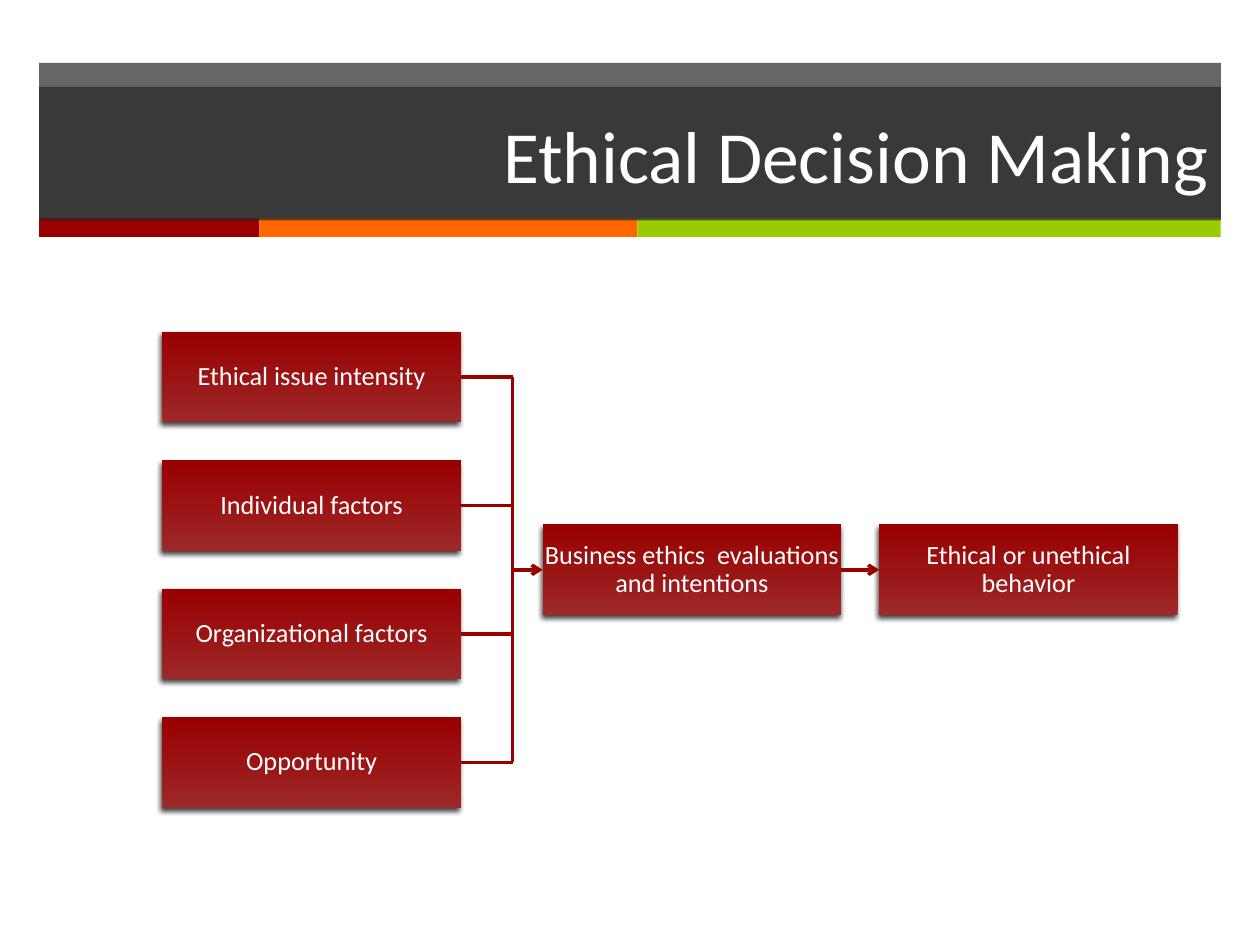
"""Build the ethical decision making slide: four factors leading to behavior."""
from lxml import etree
from pptx import Presentation
from pptx.dml.color import RGBColor
from pptx.enum import shapes as es, text as et
from pptx.oxml.ns import qn
from pptx.util import Pt

RED = RGBColor(0x99, 0x00, 0x00)
ROSE = RGBColor(0x9D, 0x28, 0x28)
DEEP = RGBColor(0x7B, 0x00, 0x00)
DARK = RGBColor(0x26, 0x26, 0x26)
ORANGE = RGBColor(0xFF, 0x66, 0x00)
GREEN = RGBColor(0x99, 0xCC, 0x00)
WHITE = RGBColor(0xFF, 0xFF, 0xFF)
FONT = "Calibri"

TITLE = "Ethical Decision Making"
FACTORS = ["Ethical issue intensity", "Individual factors",
           "Organizational factors", "Opportunity"]
INTENT = "Business ethics  evaluations and intentions"
RESULT = "Ethical or unethical behavior"
STRIPS = [(126, RED), (216, ORANGE), (333.3, GREEN)]

EDGE, SPAN = 22.3, 675.3
LEFT, TOP, STEP = 92.8, 189.6, 73.4
WIDE, HIGH = 170.6, 51.8
MID, LAST, BUS = 310.1, 502.4, 293
ROW = TOP + STEP * (len(FACTORS) - 1) / 2


def write(frame, words, size, align):
    """Put one formatted run into a text frame."""
    frame.word_wrap = True
    frame.vertical_anchor = et.MSO_ANCHOR.MIDDLE
    para = frame.paragraphs[0]
    para.alignment = align
    run = para.add_run()
    run.text = words
    run.font.size, run.font.name = Pt(size), FONT
    run.font.color.rgb = WHITE
    return para


def paint(shape, color, alpha=None):
    """Fill a shape, with an optional opacity in percent."""
    shape.fill.solid()
    shape.fill.fore_color.rgb = color
    if alpha:
        tint = shape._element.spPr.find(qn("a:solidFill"))[0]
        etree.SubElement(tint, qn("a:alpha"), val=str(alpha * 1000))


def rect(tree, x, y, w, h):
    """Add a plain rectangle without outline or shadow."""
    shape = tree.add_shape(es.MSO_SHAPE.RECTANGLE, Pt(x), Pt(y), Pt(w), Pt(h))
    shape.line.fill.background()
    shape.shadow.inherit = False
    return shape


def box(tree, x, y, words):
    """Add a shaded, shadowed box with centred text."""
    shape = rect(tree, x, y, WIDE, HIGH)
    shape.fill.gradient()
    shape.fill.gradient_angle = 90
    for stop, color in zip(shape.fill.gradient_stops, (ROSE, RED)):
        stop.color.rgb = color
    glow = etree.SubElement(
        shape._element.spPr.find(qn("a:effectLst")), qn("a:outerShdw"),
        blurRad=str(Pt(3)), dist=str(Pt(2)), dir="6600000", rotWithShape="0")
    tint = etree.SubElement(glow, qn("a:srgbClr"), val="000000")
    etree.SubElement(tint, qn("a:alpha"), val="75000")
    frame = shape.text_frame
    frame.margin_left = frame.margin_right = Pt(0.9)
    frame.margin_top = frame.margin_bottom = Pt(0.9)
    write(frame, words, 15, et.PP_ALIGN.CENTER).line_spacing = 0.9


def link(tree, x, y, x2, y2, start=None, end=None, arrow=False):
    """Add a straight line, joined to the boxes given."""
    line = tree.add_connector(es.MSO_CONNECTOR.STRAIGHT,
                              Pt(x), Pt(y), Pt(x2), Pt(y2))
    if start:
        line.begin_connect(start, 3)
    if end:
        line.end_connect(end, 1)
    line.line.color.rgb, line.line.width = RED, Pt(2)
    props = line._element.spPr
    if arrow:
        etree.SubElement(props.find(qn("a:ln")), qn("a:tailEnd"), type="arrow")
    etree.SubElement(props, qn("a:effectLst"))


def main():
    """Lay out the slide and save it."""
    deck = Presentation()
    deck.slide_width, deck.slide_height = Pt(720), Pt(540)
    slide = deck.slides.add_slide(deck.slide_layouts[5])
    tree = slide.shapes

    paint(rect(tree, EDGE, 36, SPAN, 89.3), DARK, 70)
    x = EDGE
    for width, color in STRIPS:
        paint(rect(tree, x, 124.6, width, 10.8), color)
        x += width

    title = tree.title
    title.left, title.top = Pt(EDGE), Pt(49.7)
    title.width, title.height = Pt(SPAN), Pt(76.3)
    paint(title, DARK, 70)
    title.text_frame.auto_size = et.MSO_AUTO_SIZE.NONE
    write(title.text_frame, TITLE, 42, et.PP_ALIGN.RIGHT)
    tree[-1]._element.addnext(title._element)

    spots = [(LEFT, TOP + i * STEP, words) for i, words in enumerate(FACTORS)]
    spots += [(MID, ROW, INTENT), (LAST, ROW, RESULT)]
    for spot in spots:
        box(tree, *spot)
    *facts, intent, result = list(tree)[-len(spots):]

    half = HIGH / 2
    for i, fact in enumerate(facts):
        y = TOP + i * STEP + half
        link(tree, LEFT + WIDE, y, BUS, y, start=fact)
    link(tree, BUS, TOP + half, BUS, TOP + 3 * STEP + half)
    link(tree, BUS, ROW + half, MID, ROW + half, end=intent, arrow=True)
    link(tree, MID + WIDE, ROW + half, LAST, ROW + half,
         start=intent, end=result, arrow=True)

    deck.save("out.pptx")


if __name__ == "__main__":
    main()
